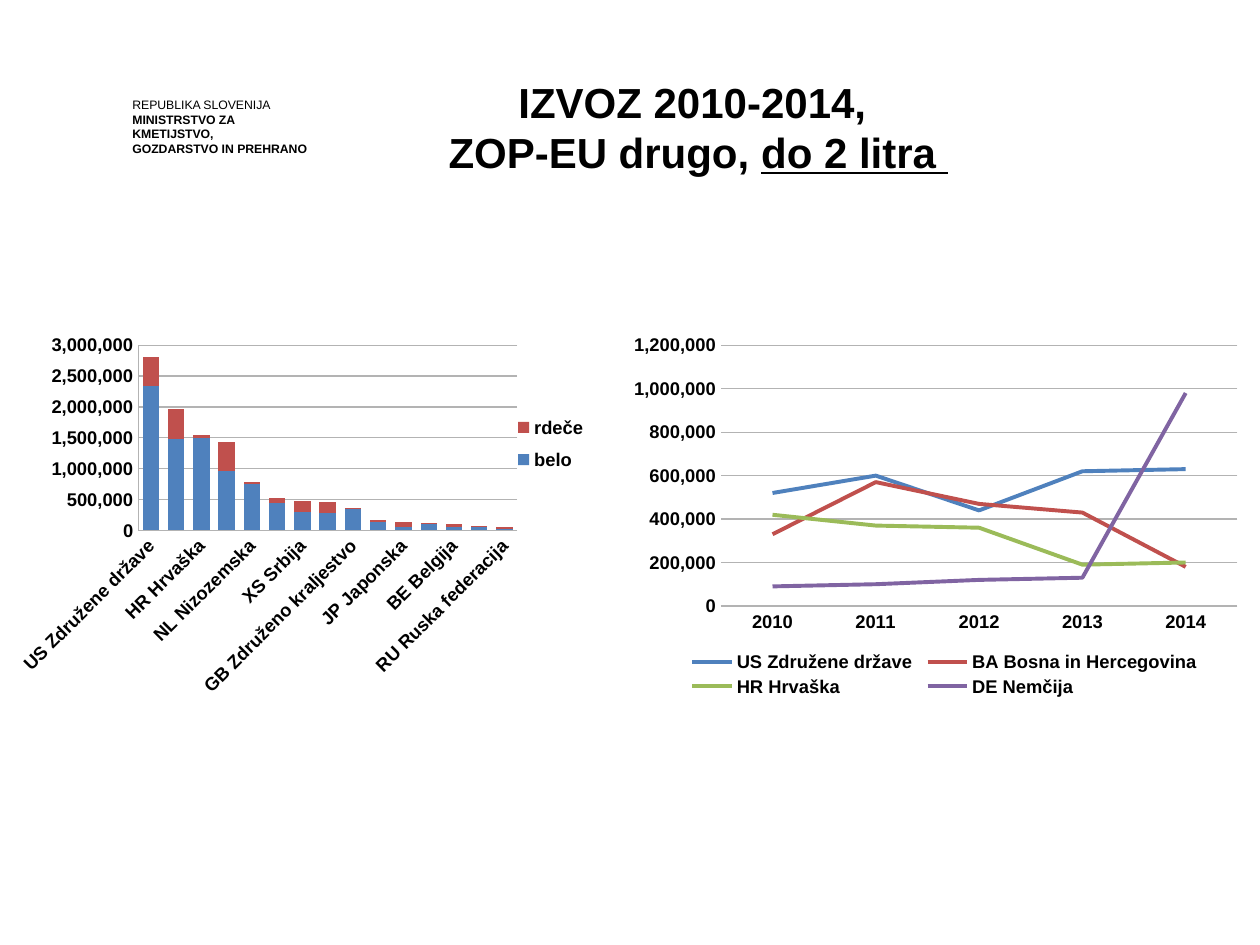
"""Builds the slide on Slovenian wine exports 2010-2014 with two charts."""
from lxml import etree
from pptx import Presentation
from pptx import util as u
from pptx.chart.data import CategoryChartData
from pptx.dml.color import RGBColor
from pptx.enum import chart as charts, text
from pptx.oxml.ns import qn

THEME = {
    "font": "Arial", "text": "000000", "grid": "B3B3B3",
    "series": ["4F81BD", "C0504D", "9BBB59", "8064A2"],
    "title": 24, "chart": 10.5, "ministry": 7, "ministry_line": 8.4,
    "line": 2.25, "axis": 0.75,
}

TITLE = [
    [("IZVOZ 2010-2014, ", {})],
    [("ZOP-EU drugo, ", {}), ("do 2 litra ", {"underline": True})],
]
MINISTRY = [
    [("REPUBLIKA SLOVENIJA", {"bold": False})],
    [("MINISTRSTVO ZA KMETIJSTVO,", {})],
    [("GOZDARSTVO IN PREHRANO", {})],
]
COUNTRIES = {
    "kind": charts.XL_CHART_TYPE.COLUMN_STACKED,
    "box": (0.2, 6.58, 12.32, 7.62),
    "plot": (0.21, 0.05, 0.62, 0.49),
    "legend": (0.8, 0.21, 0.17, 0.2),
    "legend_side": charts.XL_LEGEND_POSITION.RIGHT,
    "maximum": 3000000, "step": 500000,
    "categories": [
        "US Združene države", "BA Bosna in Hercegovina", "HR Hrvaška",
        "DE Nemčija", "NL Nizozemska", "IT Italija", "XS Srbija",
        "CN Kitajska", "GB Združeno kraljestvo", "AT Avstrija",
        "JP Japonska", "PL Poljska", "BE Belgija", "CZ Češka republika",
        "RU Ruska federacija",
    ],
    "series": {
        "belo": [2340000, 1480000, 1500000, 970000, 760000, 450000, 300000,
                 280000, 350000, 130000, 50000, 100000, 50000, 60000, 30000],
        "rdeče": [470000, 490000, 40000, 460000, 30000, 70000, 180000,
                  180000, 10000, 40000, 90000, 20000, 60000, 10000, 20000],
    },
}
YEARS = {
    "kind": charts.XL_CHART_TYPE.LINE,
    "box": (12.5, 6.58, 12.7, 7.62),
    "plot": (0.16, 0.05, 0.82, 0.69),
    "legend": (0.1, 0.85, 0.83, 0.14),
    "legend_side": charts.XL_LEGEND_POSITION.BOTTOM,
    "maximum": 1200000, "step": 200000,
    "categories": ["2010", "2011", "2012", "2013", "2014"],
    "series": {
        "US Združene države": [520000, 600000, 440000, 620000, 630000],
        "BA Bosna in Hercegovina": [330000, 570000, 470000, 430000, 180000],
        "HR Hrvaška": [420000, 370000, 360000, 190000, 200000],
        "DE Nemčija": [90000, 100000, 120000, 130000, 980000],
    },
}


def colour(name):
    return RGBColor.from_string(name)


def format_font(font, size, bold=True, underline=None):
    font.name = THEME["font"]
    font.size = u.Pt(size)
    font.bold = bold
    font.underline = underline
    font.color.rgb = colour(THEME["text"])


def write(frame, lines, size, align=None, spacing=None):
    for index, line in enumerate(lines):
        paragraph = frame.add_paragraph() if index else frame.paragraphs[0]
        paragraph.alignment = align
        paragraph.line_spacing = spacing
        for words, look in line:
            run = paragraph.add_run()
            run.text = words
            format_font(run.font, size, **look)


def place(shape, left, top, width, height):
    shape.left, shape.top = u.Cm(left), u.Cm(top)
    shape.width, shape.height = u.Cm(width), u.Cm(height)


def set_layout(parent, position, fractions, inner=False):
    for old in parent.findall(qn("c:layout")):
        parent.remove(old)
    layout = etree.Element(qn("c:layout"))
    manual = etree.SubElement(layout, qn("c:manualLayout"))
    values = [("layoutTarget", "inner")] if inner else []
    values += [("xMode", "edge"), ("yMode", "edge")]
    values += zip("xywh", fractions)
    for tag, value in values:
        etree.SubElement(manual, qn("c:" + tag)).set("val", str(value))
    parent.insert(position, layout)


def style_line(line, name, width):
    line.color.rgb = colour(name)
    line.width = u.Pt(width)


def add_export_chart(slide, content):
    data = CategoryChartData(number_format="#,##0")
    data.categories = content["categories"]
    for name, values in content["series"].items():
        data.add_series(name, values)
    box = [u.Cm(length) for length in content["box"]]
    chart = slide.shapes.add_chart(content["kind"], *box, data).chart
    chart.has_title = False
    format_font(chart.font, THEME["chart"])

    chart.has_legend = True
    chart.legend.position = content["legend_side"]
    chart.legend.include_in_layout = False
    set_layout(chart.legend._element, 1, content["legend"])
    set_layout(chart.plots[0]._element.getparent(), 0, content["plot"], True)

    values = chart.value_axis
    values.minimum_scale, values.maximum_scale = 0, content["maximum"]
    values.major_unit = content["step"]
    values.has_major_gridlines = True
    style_line(values.major_gridlines.format.line, THEME["grid"], THEME["axis"])
    values.tick_labels.number_format = "#,##0"
    values.tick_labels.number_format_is_linked = False
    for axis in (values, chart.category_axis):
        axis.major_tick_mark = charts.XL_TICK_MARK.NONE
        axis.minor_tick_mark = charts.XL_TICK_MARK.NONE
        style_line(axis.format.line, THEME["grid"], THEME["axis"])
        format_font(axis.tick_labels.font, THEME["chart"])
    chart.plots[0].vary_by_categories = False
    return chart


def style_columns(chart):
    plot = chart.plots[0]
    plot.gap_width, plot.overlap = 55, 100
    for series, name in zip(plot.series, THEME["series"]):
        series.format.fill.solid()
        series.format.fill.fore_color.rgb = colour(name)
    axis = chart.category_axis._element
    axis.find(qn("c:txPr")).find(qn("a:bodyPr")).set("rot", "-2700000")
    skip = etree.Element(qn("c:tickLblSkip"))
    skip.set("val", "2")
    axis.find(qn("c:noMultiLvlLbl")).addprevious(skip)


def style_lines(chart):
    chart.value_axis.format.line.fill.background()
    for series, name in zip(chart.plots[0].series, THEME["series"]):
        series.smooth = False
        series.marker.style = charts.XL_MARKER_STYLE.NONE
        style_line(series.format.line, name, THEME["line"])


def main():
    presentation = Presentation()
    presentation.slide_width, presentation.slide_height = u.Cm(25.4), u.Cm(19.05)
    slide = presentation.slides.add_slide(presentation.slide_layouts[5])

    ministry = slide.shapes.add_textbox(0, 0, 0, 0)
    place(ministry, 2.67, 1.96, 3.73, 1.2)
    frame = ministry.text_frame
    frame.word_wrap = True
    frame.margin_left = frame.margin_right = 0
    frame.margin_top = frame.margin_bottom = 0
    write(frame, MINISTRY, THEME["ministry"],
          spacing=u.Pt(THEME["ministry_line"]))

    style_columns(add_export_chart(slide, COUNTRIES))
    style_lines(add_export_chart(slide, YEARS))

    title = slide.shapes.title
    place(title, 8.74, 1.4, 10.67, 2.31)
    title.text_frame.word_wrap = False
    title.text_frame.auto_size = text.MSO_AUTO_SIZE.SHAPE_TO_FIT_TEXT
    write(title.text_frame, TITLE, THEME["title"], align=text.PP_ALIGN.CENTER)

    presentation.save("out.pptx")


if __name__ == "__main__":
    main()
